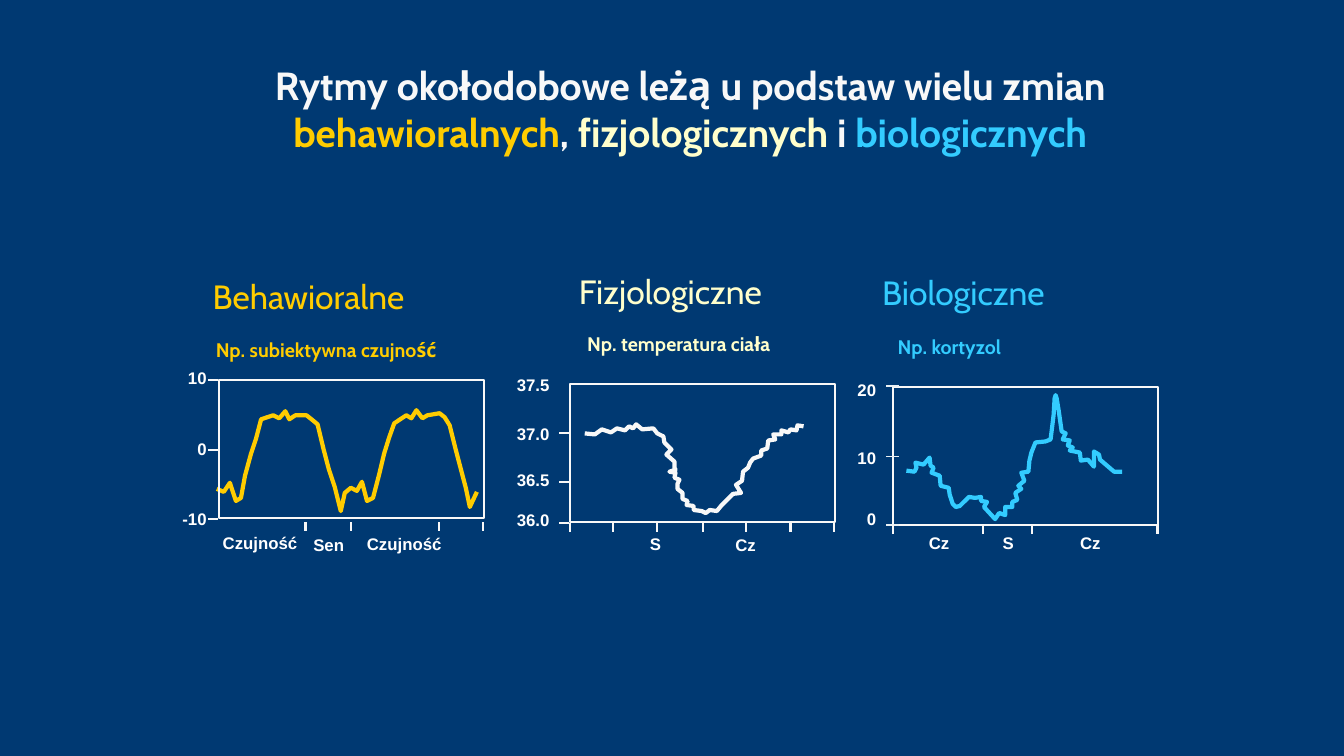
"""Build a slide on circadian rhythms with three framed curves."""
from lxml.etree import SubElement
from pptx import Presentation
from pptx.dml.color import RGBColor
from pptx.enum.shapes import MSO_CONNECTOR, MSO_SHAPE
from pptx.enum.text import MSO_AUTO_SIZE, PP_ALIGN
from pptx.oxml.ns import qn
from pptx.util import Inches, Pt

UNIT = Inches(0.01)
FRAME_WIDTH, FRAME_HEIGHT = 263, 137
LABEL_HEIGHT, TICK = 21, 9
WHITE, PALE, YELLOW, CREAM, BLUE = "FFFFFF", "F8F8F8", "FFCC00", "FFFFCC", "33CCFF"
LEFT, CENTER, RIGHT = PP_ALIGN.LEFT, PP_ALIGN.CENTER, PP_ALIGN.RIGHT

presentation = Presentation()
presentation.slide_width = 1333 * UNIT
presentation.slide_height = 750 * UNIT
slide = presentation.slides.add_slide(presentation.slide_layouts[6])
slide.background.fill.solid()
slide.background.fill.fore_color.rgb = RGBColor.from_string("003972")


def add_label(text, box, size, color, align, font="Cabin", bold=True, margin=0):
    """Add one unwrapped line of text in a box given in grid units."""
    shape = slide.shapes.add_textbox(*[value * UNIT for value in box])
    frame = shape.text_frame
    frame.text = text
    frame.word_wrap = False
    frame.auto_size = MSO_AUTO_SIZE.SHAPE_TO_FIT_TEXT
    frame.margin_left = frame.margin_right = margin * UNIT
    frame.margin_top = frame.margin_bottom = margin // 2 * UNIT
    paragraph = frame.paragraphs[0]
    paragraph.alignment = align
    run_font = paragraph.runs[0].font
    run_font.name, run_font.size, run_font.bold = font, Pt(size), bold
    run_font.color.rgb = RGBColor.from_string(color)


def add_tick(start_x, start_y, end_x, end_y, color=PALE, width=1.5):
    """Add a short straight axis mark."""
    ends = [value * UNIT for value in (start_x, start_y, end_x, end_y)]
    tick = slide.shapes.add_connector(MSO_CONNECTOR.STRAIGHT, *ends)
    tick.line.color.rgb = RGBColor.from_string(color)
    tick.line.width = Pt(width)
    SubElement(tick.element.spPr, qn("a:effectLst"))


title_box = slide.shapes.add_textbox(226 * UNIT, 56 * UNIT, 917 * UNIT, 63 * UNIT)
title_box.text_frame.word_wrap = True
title = title_box.text_frame.paragraphs[0]
title.alignment = CENTER
for text, color in [
    ("Rytmy okołodobowe leżą u podstaw wielu zmian ", PALE),
    ("behawioralnych", YELLOW),
    (", ", PALE),
    ("fizjologicznych", CREAM),
    (" i ", PALE),
    ("biologicznych", BLUE),
]:
    run = title.add_run()
    run.text = text
    run.font.name, run.font.size, run.font.bold = "Cabin", Pt(28), True
    run.font.color.rgb = RGBColor.from_string(color)

alertness = [
    (215, 485), (222, 488), (228, 479), (234, 497), (239, 494), (243, 472), (249, 450),
    (254, 435), (259, 416), (265, 414), (271, 412), (277, 415), (283, 408), (287, 416),
    (293, 412), (304, 412), (309, 416), (315, 421), (321, 446), (326, 465), (332, 483),
    (338, 507), (342, 489), (348, 484), (354, 487), (359, 478), (364, 497), (370, 494),
    (376, 471), (381, 450), (386, 434), (391, 420), (397, 416), (403, 412), (408, 415),
    (413, 407), (419, 415), (424, 412), (436, 410), (441, 414), (446, 422), (452, 446),
    (457, 465), (462, 484), (466, 503), (473, 488)]
temperature = [
    (580, 430), (590, 431), (597, 426), (606, 429), (612, 425), (620, 427), (624, 423),
    (628, 425), (631, 421), (637, 426), (648, 425), (652, 430), (658, 433), (659, 439),
    (666, 446), (661, 451), (669, 458), (669, 464), (670, 466), (664, 468), (670, 469),
    (669, 474), (674, 476), (672, 480), (672, 485), (677, 489), (677, 495), (682, 497),
    (681, 501), (688, 502), (688, 506), (696, 507), (700, 509), (704, 506), (711, 507),
    (716, 501), (727, 490), (735, 489), (730, 481), (736, 477), (737, 468), (742, 464),
    (744, 459), (747, 455), (755, 452), (755, 447), (761, 445), (762, 437), (769, 436),
    (767, 431), (775, 431), (775, 427), (782, 429), (784, 426), (790, 427), (791, 422),
    (797, 423)]
cortisol = [
    (899, 467), (907, 468), (909, 464), (908, 459), (916, 461), (922, 454), (923, 462),
    (926, 464), (924, 469), (932, 472), (933, 482), (941, 484), (942, 491), (945, 500),
    (948, 503), (952, 502), (961, 493), (967, 494), (973, 493), (973, 497), (979, 498),
    (976, 503), (987, 515), (991, 509), (997, 511), (997, 503), (1004, 503), (1004, 498),
    (1009, 496), (1007, 489), (1013, 485), (1010, 482), (1016, 477), (1013, 469),
    (1020, 468), (1021, 457), (1023, 449), (1027, 439), (1037, 438), (1042, 436),
    (1045, 412), (1046, 395), (1047, 392), (1048, 395), (1050, 407), (1053, 428),
    (1057, 430), (1054, 436), (1061, 437), (1059, 442), (1064, 444), (1061, 447),
    (1071, 449), (1072, 457), (1079, 456), (1085, 463), (1085, 448), (1090, 451),
    (1091, 456), (1105, 468), (1113, 468)]

panels = [
    dict(color=YELLOW, curve=alertness, curve_color=YELLOW, frame=(217, 377),
         heading=("Behawioralne", (201, 269, 222, 50), LEFT),
         example=("Np. subiektywna czujność", (214, 335, 239, 24), LEFT),
         ticks_y=(216, 206, [377, 446, 515], PALE, 1.5), right=205,
         labels_y=[("10", 365, 19), ("0", 435, 10), ("-10", 505, 25)],
         ticks_x=(518, [303, 348, 435, 479]),
         labels_x=[("Czujność", 220, 528, 76), ("Sen", 310, 530, 32),
                   ("Czujność", 363, 529, 76)]),
    dict(color=CREAM, curve=temperature, curve_color=PALE, frame=(565, 381),
         heading=("Fizjologiczne", (557, 264, 216, 50), CENTER),
         example=("Np. temperatura ciała", (563, 329, 201, 24), RIGHT),
         ticks_y=(564, 554, [430, 478, 519], PALE, 1.5), right=545,
         labels_y=[("37.5", 372, 33), ("37.0", 420, 33), ("36.5", 466, 33),
                   ("36.0", 506, 33)],
         ticks_x=(519, [565, 608, 652, 697, 740, 784, 827]),
         labels_x=[("S", 644, 529, 12), ("Cz", 729, 530, 21)]),
    dict(color=BLUE, curve=cortisol, curve_color=BLUE, frame=(886, 384),
         heading=("Biologiczne", (861, 265, 189, 50), CENTER),
         example=("Np. kortyzol", (879, 332, 114, 24), RIGHT),
         ticks_y=(879, 892, [383, 453, 521], "E9F0F4", 1), right=869,
         labels_y=[("20", 377, 19), ("10", 444, 19), ("0", 505, 10)],
         ticks_x=(521, [886, 975, 1024, 1148]),
         labels_x=[("Cz", 921, 528, 21), ("S", 994, 528, 12), ("Cz", 1071, 528, 21)]),
]

for panel in panels:
    text, box, align = panel["heading"]
    add_label(text, box, 24, panel["color"], align, bold=False, margin=10)
    text, box, align = panel["example"]
    add_label(text, box, 14, panel["color"], align)

    builder = slide.shapes.build_freeform(*panel["curve"][0], scale=UNIT)
    builder.add_line_segments(panel["curve"][1:], close=False)
    curve = builder.convert_to_shape()
    left, top = panel["frame"]
    frame_box = [value * UNIT for value in (left, top, FRAME_WIDTH, FRAME_HEIGHT)]
    frame = slide.shapes.add_shape(MSO_SHAPE.RECTANGLE, *frame_box)
    for shape, color, width in [(curve, panel["curve_color"], 3), (frame, PALE, 1.5)]:
        shape.shadow.inherit = False
        shape.fill.background()
        shape.line.color.rgb = RGBColor.from_string(color)
        shape.line.width = Pt(width)
    SubElement(curve.element.spPr.find(qn("a:ln")), qn("a:round"))

    start, end, rows, color, width = panel["ticks_y"]
    for row in rows:
        add_tick(start, row, end, row, color, width)
    row, columns = panel["ticks_x"]
    for column in columns:
        add_tick(column, row, column, row + TICK)

    for text, row, width in panel["labels_y"]:
        box = (panel["right"] - width, row, width, LABEL_HEIGHT)
        add_label(text, box, 12, WHITE, RIGHT, "Arial")
    for text, column, row, width in panel["labels_x"]:
        add_label(text, (column, row, width, LABEL_HEIGHT), 12, WHITE, CENTER, "Arial")

presentation.save("out.pptx")
